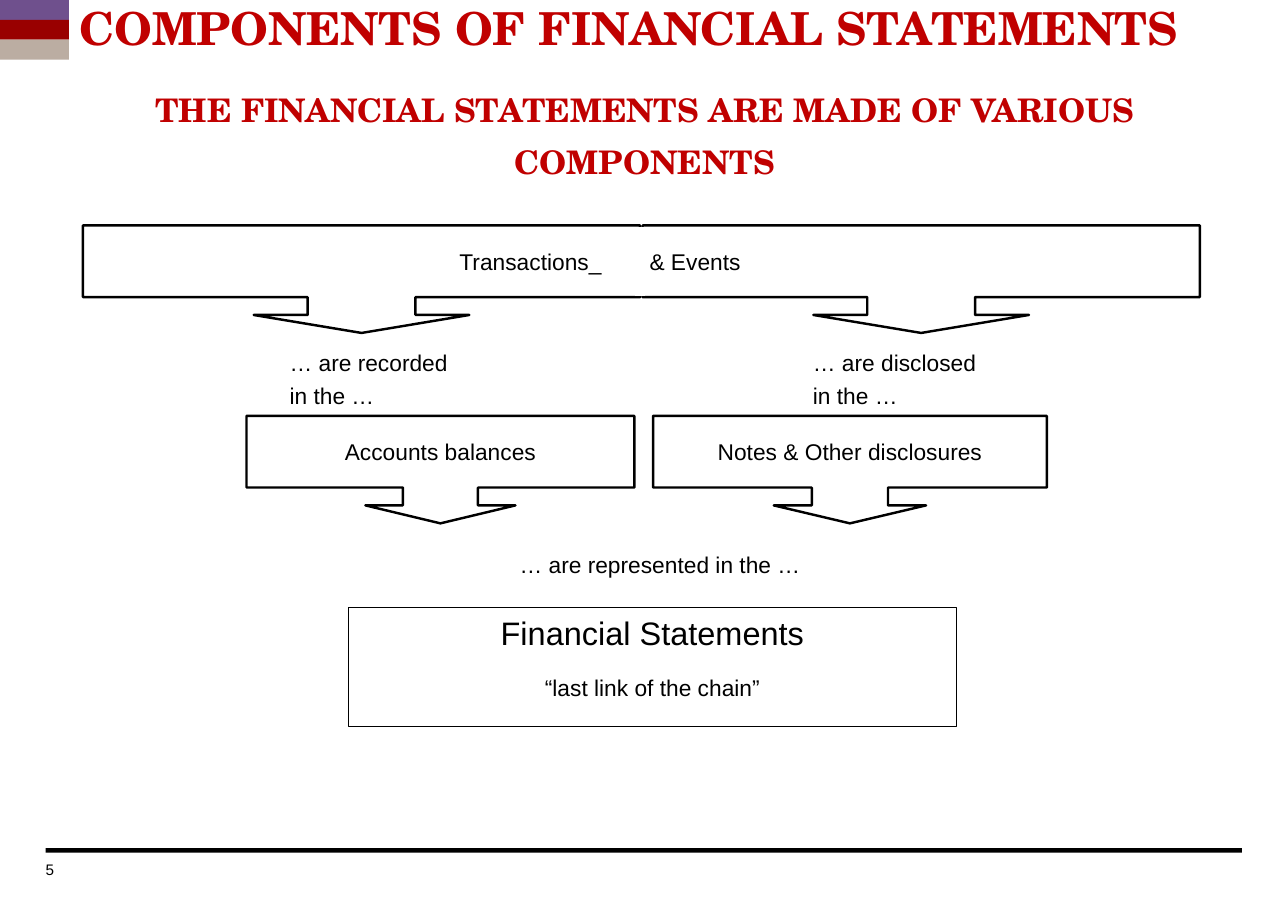
from lxml import etree
from pptx import Presentation
from pptx.dml.color import RGBColor
from pptx.enum.shapes import MSO_CONNECTOR, MSO_SHAPE
from pptx.enum.text import MSO_ANCHOR, MSO_AUTO_SIZE, PP_ALIGN
from pptx.oxml.ns import qn
from pptx.util import Pt

PX = 9144
RECT, CALL = MSO_SHAPE.RECTANGLE, MSO_SHAPE.DOWN_ARROW_CALLOUT
TOP, MID = MSO_ANCHOR.TOP, MSO_ANCHOR.MIDDLE
LEFT, CENTER, RIGHT = PP_ALIGN.LEFT, PP_ALIGN.CENTER, PP_ALIGN.RIGHT
BLACK, WHITE, RED = "000000", "FFFFFF", "C00000"
SANS, SERIF = "Arial", "TeX Gyre Schola"
FLUSH, INSET = (0, 0, 0, 0), (10, 5, 10, 5)


def paint(fill, tone):
    fill.solid()
    fill.fore_color.rgb = RGBColor.from_string(tone)


def write(shape, text, size, align, pads, anchor=TOP, face=SANS, tone=BLACK, pitch=None):
    frame = shape.text_frame
    frame.text = text
    frame.word_wrap = True
    frame.auto_size = MSO_AUTO_SIZE.NONE
    frame.vertical_anchor = anchor
    frame.margin_left, frame.margin_top, frame.margin_right, frame.margin_bottom = [
        pad * PX for pad in pads]
    for i, para in enumerate(frame.paragraphs):
        para.alignment = align
        para.space_before = Pt(3 if i else 0)
        if pitch:
            para.line_spacing = Pt(pitch)
        for run in para.runs:
            run.font.name = face
            run.font.size = Pt(size)
            run.font.bold = face == SERIF
            paint(run.font.fill, tone)


deck = Presentation()
deck.slide_width, deck.slide_height = Pt(793.75), Pt(567)
slide = deck.slides.add_slide(deck.slide_layouts[5])
shapes = slide.shapes
paint(slide.background.fill, WHITE)

bars = [(39, 726, 1024, 4, BLACK)]
for row, tone in enumerate(("6F508D", "990000", "BBADA2")):
    bars.append((0, row * 17, 59, 17, tone))
for x, y, w, h, tone in bars:
    bar = shapes.add_shape(RECT, x * PX, y * PX, w * PX, h * PX)
    bar.shadow.inherit = False
    paint(bar.fill, tone)
    bar.line.fill.background()

title = shapes.title
title.left, title.top, title.width, title.height = 40 * PX, 66 * PX, 1024 * PX, 117 * PX
write(title, "THE FINANCIAL STATEMENTS ARE MADE OF VARIOUS COMPONENTS",
      20, CENTER, FLUSH, face=SERIF, tone=RED, pitch=32.1)

head = shapes.add_textbox(68 * PX, 2 * PX, 1010 * PX, 56 * PX)
write(head, "COMPONENTS OF FINANCIAL STATEMENTS",
      28, LEFT, FLUSH, face=SERIF, tone=RED, pitch=32.1)

boxes = [
    (CALL, 71, 193, 477, 92, 1.5, "Transactions_", 14, RIGHT, (0, 0, 33, 0), MID),
    (CALL, 550, 193, 477, 92, 1.5, "& Events", 14, LEFT, (6, 0, 0, 0), MID),
    (CALL, 211, 356, 332, 92, 1.5, "Accounts balances", 14, CENTER, FLUSH, MID),
    (CALL, 559, 356, 337, 92, 1.5, "Notes & Other disclosures", 14, CENTER, FLUSH, MID),
    (RECT, 298, 520, 521, 102, 0.75, "Financial Statements", 20, CENTER, INSET, TOP),
]
for kind, x, y, w, h, edge, text, size, align, pads, anchor in boxes:
    box = shapes.add_shape(kind, x * PX, y * PX, w * PX, h * PX)
    box.shadow.inherit = False
    box.fill.background()
    paint(box.line.fill, BLACK)
    box.line.width = Pt(edge)
    if kind == CALL:
        shaft = w * 0.1935 / h
        for i, ratio in enumerate((shaft, shaft, 0.167, 0.667)):
            box.adjustments[i] = ratio
    write(box, text, size, align, pads, anchor)

labels = [
    (238, 294, 378, 62, "… are recorded\nin the …", 14, LEFT, INSET),
    (686, 294, 378, 62, "… are disclosed\nin the …", 14, LEFT, INSET),
    (376, 467, 378, 33, "… are represented in the …", 14, CENTER, INSET),
    (298, 572, 521, 34, "“last link of the chain”", 14, CENTER, INSET),
    (39, 736, 79, 20, "5", 9.4, LEFT, FLUSH),
]
for x, y, w, h, text, size, align, pads in labels:
    label = shapes.add_textbox(x * PX, y * PX, w * PX, h * PX)
    write(label, text, size, align, pads)

seam = shapes.add_connector(MSO_CONNECTOR.STRAIGHT, 548 * PX, 194 * PX, 548 * PX, 253 * PX)
paint(seam.line.fill, WHITE)
seam.line.width = Pt(6)
etree.SubElement(seam._element.spPr, qn("a:effectLst"))

deck.save("out.pptx")
